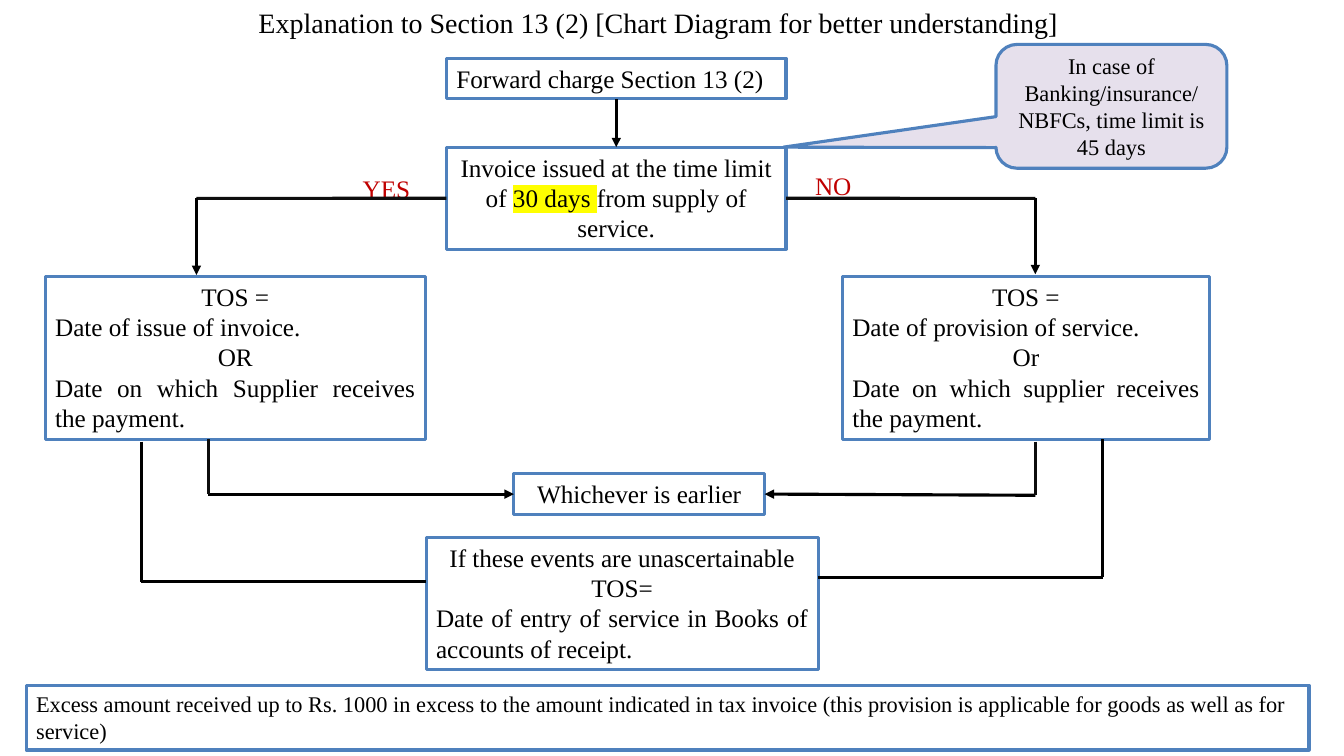
"""Build a flowchart slide on the time of supply of services under Section 13 (2)."""
from lxml import etree
from pptx import Presentation
from pptx.dml.color import RGBColor
from pptx.enum.shapes import MSO_CONNECTOR, MSO_SHAPE
from pptx.enum.text import MSO_ANCHOR, MSO_AUTO_SIZE, PP_ALIGN
from pptx.oxml.ns import qn
from pptx.util import Cm, Pt

LEFT, CENTER, JUSTIFY = PP_ALIGN.LEFT, PP_ALIGN.CENTER, PP_ALIGN.JUSTIFY
TOP, MIDDLE = MSO_ANCHOR.TOP, MSO_ANCHOR.MIDDLE
GROW, FIXED = MSO_AUTO_SIZE.SHAPE_TO_FIT_TEXT, MSO_AUTO_SIZE.NONE
RECT, CALLOUT = MSO_SHAPE.RECTANGLE, MSO_SHAPE.ROUNDED_RECTANGULAR_CALLOUT
STRAIGHT = MSO_CONNECTOR.STRAIGHT
COLORS = {"white": "FFFFFF", "black": "000000", "soft": "0D0D0D", "border": "4F81BD",
          "answer": "C00000", "mark": "FFFF00", "lilac": "E6E0EC"}
FONT = "Times New Roman"
LINE_WIDTH = Pt(2.25)


def rgb(name):
    return RGBColor.from_string(COLORS[name])


def add_text(paragraphs, at, shape=RECT, fill="white", line="border", size=18,
             color="black", anchor=TOP, fit=GROW, marked=None):
    """Add a box of (alignment, runs) paragraphs; no shape gives a text box."""
    at = [Cm(v) for v in at]
    if shape is None:
        sp = s.shapes.add_textbox(*at)
    else:
        sp = s.shapes.add_shape(shape, *at)
        sp.shadow.inherit = False
        sp.fill.solid()
        sp.fill.fore_color.rgb = rgb(fill)
        if line:
            sp.line.color.rgb = rgb(line)
            sp.line.width = LINE_WIDTH
        else:
            sp.line.fill.background()
    tf = sp.text_frame
    tf.word_wrap = True
    tf.auto_size = fit
    tf.vertical_anchor = anchor
    for i, (align, *runs) in enumerate(paragraphs):
        p = tf.add_paragraph() if i else tf.paragraphs[0]
        p.alignment = align
        for text in runs:
            r = p.add_run()
            r.text = text
            r.font.size = Pt(size)
            r.font.color.rgb = rgb(color)
            if text == marked:
                highlight = etree.SubElement(r.font._element, qn("a:highlight"))
                etree.SubElement(highlight, qn("a:srgbClr"), val=COLORS["mark"])
            r.font.name = FONT
    return sp


prs = Presentation()
prs.slide_width, prs.slide_height = Cm(33.87), Cm(19.05)
s = prs.slides.add_slide(prs.slide_layouts[6])

add_text([(CENTER, "Explanation to Section 13 (2) [Chart Diagram for better understanding]")],
         (0.43, -0.1, 32.33, 1.3), line=None, size=20, anchor=MIDDLE, fit=FIXED)
forward = add_text([(LEFT, "Forward charge Section 13 (2)")], (11.25, 1.47, 8.56, 1.02))
invoice = add_text(
    [(CENTER, "Invoice issued at the time limit of ", "30 days ", "from supply of service.")],
    (11.25, 3.71, 8.56, 2.57), marked="30 days ")

outcomes = [
    (1.14, 9.58, "Date of issue of invoice.", "OR",
     "Date on which Supplier receives the payment."),
    (21.23, 9.25, "Date of provision of service.", "Or",
     "Date on which supplier receives the payment."),
]
for left, width, first, either, second in outcomes:
    add_text([(CENTER, "TOS ="), (JUSTIFY, first), (CENTER, either), (JUSTIFY, second)],
             (left, 6.96, width, 4.11))

for answer, at in [("YES", (8.89, 4.24, 2.51, 1.02)), ("NO", (20.29, 4.17, 1.88, 1.02))]:
    add_text([(LEFT, answer)], at, shape=None, color="answer")

earlier = add_text([(CENTER, "Whichever is earlier")], (12.95, 11.94, 6.32, 1.02))
add_text([(CENTER, "If these events are unascertainable TOS="),
          (JUSTIFY, "Date of entry of service in Books of accounts of receipt.")],
         (10.74, 13.54, 9.88, 3.33))
add_text([(LEFT, "Excess amount received up to Rs. 1000 in excess to the amount indicated in "
                 "tax invoice (this provision is applicable for goods as well as for service)")],
         (0.66, 17.27, 32.33, 1.63), size=16)

links = [
    ((15.53, 2.49, 15.53, 3.71), "black", True, (forward, 2), (invoice, 0)),
    ((11.25, 5, 4.95, 5), "soft", False, (invoice, 1), None),
    ((19.81, 5, 26.09, 5), "soft", False, (invoice, 3), None),
    ((4.95, 5, 4.95, 6.93), "black", True, None, None),
    ((26.09, 5, 26.09, 6.91), "black", True, None, None),
    ((26.09, 12.48, 19.27, 12.45), "black", True, None, (earlier, 3)),
    ((5.25, 12.45, 12.95, 12.45), "black", True, None, (earlier, 1)),
    ((26.09, 11.13, 26.09, 12.48), "soft", False, None, None),
    ((5.25, 11.07, 5.25, 12.45), "soft", False, None, None),
    ((3.56, 11.13, 3.56, 14.66), "black", False, None, None),
    ((27.79, 11.07, 27.79, 14.55), "black", False, None, None),
    ((3.56, 14.66, 10.74, 14.66), "black", False, None, None),
    ((20.62, 14.55, 27.79, 14.55), "black", False, None, None),
]
for ends, color, arrow, start, end in links:
    link = s.shapes.add_connector(STRAIGHT, *[Cm(v) for v in ends])
    link.line.color.rgb = rgb(color)
    link.line.width = LINE_WIDTH
    if start:
        link.begin_connect(*start)
    if end:
        link.end_connect(*end)
    if arrow:
        etree.SubElement(link.line._get_or_add_ln(), qn("a:tailEnd"), type="triangle")
    etree.SubElement(link._element.spPr, qn("a:effectLst"))

callout = add_text([(CENTER, "In case of Banking/insurance/"),
                    (CENTER, "NBFCs, time limit is 45 days")],
                   (25.1, 1.12, 5.82, 3.12), shape=CALLOUT, fill="lilac", size=16,
                   anchor=MIDDLE, fit=FIXED)
for i, value in enumerate((-1.42, 0.33, 0.17)):
    callout.adjustments[i] = value

prs.save("out.pptx")
